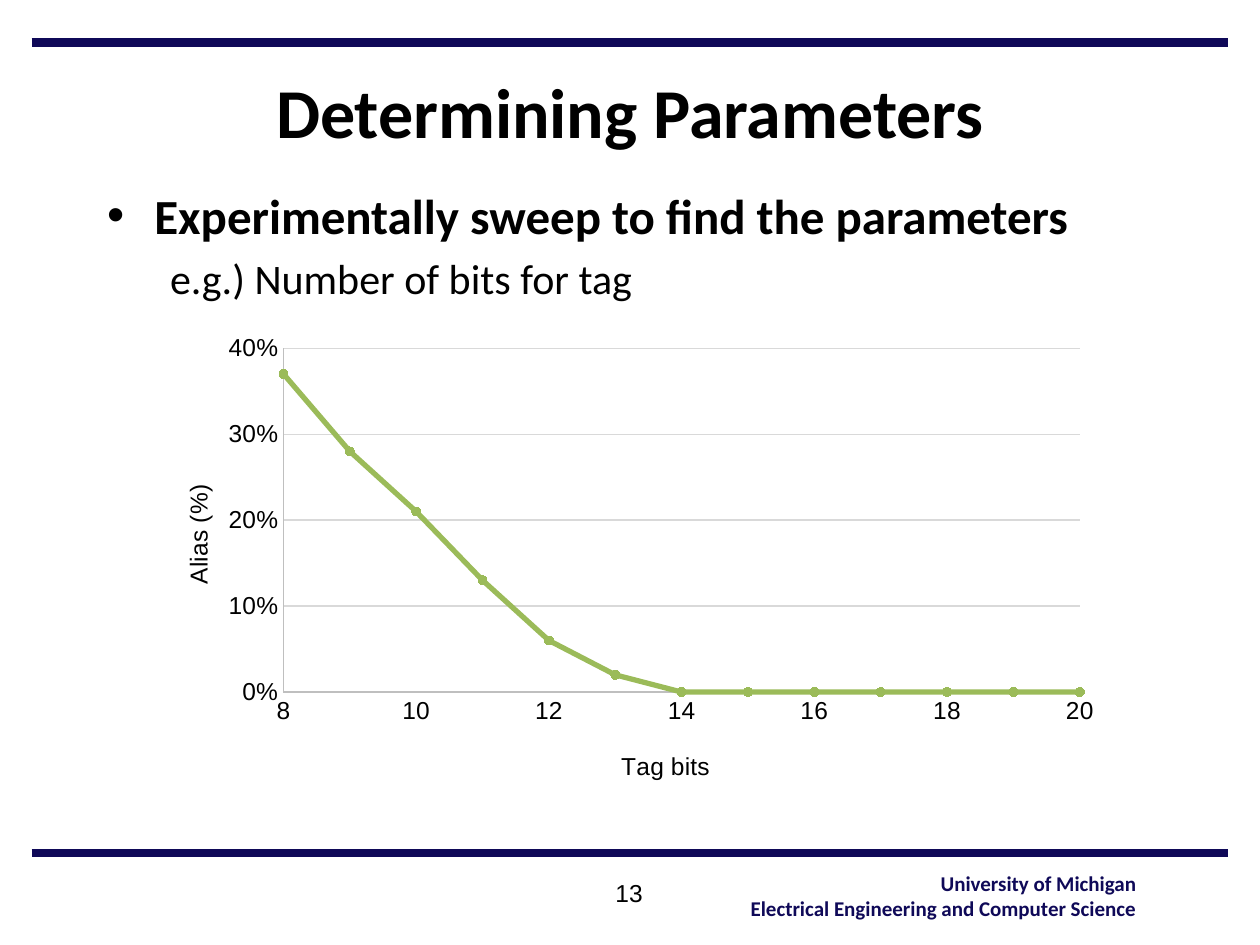
from dataclasses import dataclass

from lxml.etree import SubElement
from pptx import Presentation
from pptx.chart.data import XyChartData
from pptx.dml.color import RGBColor
from pptx.enum.chart import XL_CHART_TYPE, XL_MARKER_STYLE, XL_TICK_MARK
from pptx.enum.shapes import MSO_CONNECTOR
from pptx.enum.text import MSO_ANCHOR, MSO_AUTO_SIZE, PP_ALIGN
from pptx.oxml import parse_xml
from pptx.oxml.ns import nsdecls, qn
from pptx.util import Pt


@dataclass(frozen=True)
class Theme:
    navy: str = "0F0958"
    black: str = "000000"
    axis: str = "BFBFBF"
    grid: str = "D9D9D9"
    curve: str = "9BBB59"
    marker: str = "4F6228"
    sans: str = "Calibri"
    plain: str = "Arial"
    title: float = 40
    point: float = 28
    detail: float = 24
    label: float = 14
    footer: float = 12


@dataclass(frozen=True)
class Box:
    left: float
    top: float
    width: float
    height: float

    def lengths(self) -> tuple:
        return Pt(self.left), Pt(self.top), Pt(self.width), Pt(self.height)


@dataclass(frozen=True)
class Scale:
    title: str
    low: float
    high: float
    step: float
    form: str
    left: float
    top: float
    turn: int


THEME = Theme()
RULES = (24.5, 487.5)
ALIAS = (0.37, 0.28, 0.21, 0.13, 0.06, 0.02) + (0,) * 7
FIRST = 8
TAGS = Scale("Tag bits", 8, 20, 2, "General", 0.487, 0.89, 0)
RATES = Scale("Alias (%)", 0, 0.4, 0.1, "0%", 0.034, 0.328, -5400000)


def style(font, size: float, name: str = THEME.plain,
          color: str = THEME.black, bold: bool = False) -> None:
    font.size, font.name, font.bold = Pt(size), name, bold
    font.color.rgb = RGBColor.from_string(color)


def write(frame, text: str, *, new: bool = False, align=PP_ALIGN.LEFT,
          level: int = 0, indent=None, bullet: str = "",
          before: float = 0, **look) -> None:
    """Fill the first paragraph, or append one; indent is (margin, hang)."""
    para = frame.add_paragraph() if new else frame.paragraphs[0]
    para.alignment, para.level, para.space_before = align, level, Pt(before)
    if indent:
        props = para._p.get_or_add_pPr()
        for key, value in zip(("marL", "indent"), indent):
            props.set(key, str(Pt(value)))
        if bullet:
            SubElement(props, qn("a:buChar")).set("char", bullet)
        else:
            SubElement(props, qn("a:buNone"))
    run = para.add_run()
    run.text = text
    style(run.font, **look)


def stroke(line, color: str, width: float) -> None:
    line.color.rgb = RGBColor.from_string(color)
    line.width = Pt(width)


def rule(slide, y: float) -> None:
    line = slide.shapes.add_connector(
        MSO_CONNECTOR.STRAIGHT, Pt(18), Pt(y), Pt(701.5), Pt(y))
    stroke(line.line, THEME.navy, 5)
    SubElement(line._element.spPr, qn("a:effectLst"))


def place(shape, box: Box, anchor):
    shape.left, shape.top, shape.width, shape.height = box.lengths()
    frame = shape.text_frame
    frame.word_wrap, frame.auto_size = True, MSO_AUTO_SIZE.NONE
    frame.vertical_anchor = anchor
    return frame


def label(slide, box: Box, wrap: bool = True):
    frame = slide.shapes.add_textbox(*box.lengths()).text_frame
    frame.word_wrap = wrap
    return frame


def arrange(parent, index: int, **parts) -> None:
    """Give a chart part a manual layout in fractions of the chart."""
    for old in parent.findall(qn("c:layout")):
        parent.remove(old)
    modes = {"xMode": "edge", "yMode": "edge"}
    if "w" in parts:
        modes = {"layoutTarget": "inner", **modes}
    body = "".join(f'<c:{key} val="{value}"/>'
                   for key, value in {**modes, **parts}.items())
    parent.insert(index, parse_xml(
        f'<c:layout {nsdecls("c")}><c:manualLayout>{body}'
        '</c:manualLayout></c:layout>'))


def set_axis(axis, scale: Scale, grid: bool) -> None:
    axis.minimum_scale, axis.maximum_scale = scale.low, scale.high
    axis.major_unit = scale.step
    axis.major_tick_mark = axis.minor_tick_mark = XL_TICK_MARK.NONE
    axis.has_major_gridlines = grid
    if grid:
        stroke(axis.major_gridlines.format.line, THEME.grid, 0.75)
    stroke(axis.format.line, THEME.axis, 0.75)
    ticks = axis.tick_labels
    ticks.number_format, ticks.number_format_is_linked = scale.form, False
    style(ticks.font, THEME.label)
    frame = axis.axis_title.text_frame
    write(frame, scale.title, align=PP_ALIGN.CENTER, size=THEME.label)
    frame._txBody.bodyPr.set("rot", str(scale.turn))
    arrange(axis.axis_title._element, 1, x=scale.left, y=scale.top)


def plot(slide, box: Box) -> None:
    data = XyChartData()
    points = data.add_series("Series 1")
    for bits, alias in enumerate(ALIAS, FIRST):
        points.add_data_point(bits, alias)
    chart = slide.shapes.add_chart(
        XL_CHART_TYPE.XY_SCATTER_LINES, *box.lengths(), data).chart
    chart.has_legend = chart.has_title = False
    style(chart.font, 10)
    set_axis(chart.category_axis, TAGS, grid=False)
    set_axis(chart.value_axis, RATES, grid=True)
    chart.plots[0].vary_by_categories = False
    curve = chart.plots[0].series[0]
    curve.smooth = False
    stroke(curve.format.line, THEME.curve, 3)
    marker = curve.marker
    marker.style, marker.size = XL_MARKER_STYLE.CIRCLE, 5
    marker.format.fill.solid()
    marker.format.fill.fore_color.rgb = RGBColor.from_string(THEME.marker)
    stroke(marker.format.line, THEME.curve, 0.75)
    area = chart._chartSpace.find(qn("c:chart")).find(qn("c:plotArea"))
    arrange(area, 0, x=0.143, y=0.049, w=0.822, h=0.728)


def main() -> None:
    deck = Presentation()
    deck.slide_width, deck.slide_height = Pt(720), Pt(540)
    slide = deck.slides.add_slide(deck.slide_layouts[1])
    for y in RULES:
        rule(slide, y)

    dept = label(slide, Box(419, 494, 237.5, 36), wrap=False)
    for row, text in enumerate(("University of Michigan",
                                "Electrical Engineering and Computer Science")):
        write(dept, text, new=row > 0, align=PP_ALIGN.RIGHT, size=THEME.footer,
              name=THEME.sans, color=THEME.navy, bold=True)

    title = place(slide.shapes.title, Box(54, 30.25, 612, 65.5), MSO_ANCHOR.MIDDLE)
    write(title, "Determining Parameters", align=PP_ALIGN.CENTER,
          size=THEME.title, name=THEME.sans, bold=True)

    body = place(slide.placeholders[1], Box(54, 102.25, 612, 84), MSO_ANCHOR.TOP)
    write(body, "Experimentally sweep to find the parameters", indent=(27, -27),
          bullet="•", size=THEME.point, name=THEME.sans, bold=True)
    write(body, "e.g.) Number of bits for tag", new=True, level=1, indent=(36, 0),
          before=5, size=THEME.detail, name=THEME.sans)

    write(label(slide, Box(284.5, 498.25, 150, 36)), "13",
          align=PP_ALIGN.CENTER, size=THEME.label)
    plot(slide, Box(82.8, 185.75, 553.7, 270))
    deck.save("out.pptx")


if __name__ == "__main__":
    main()
